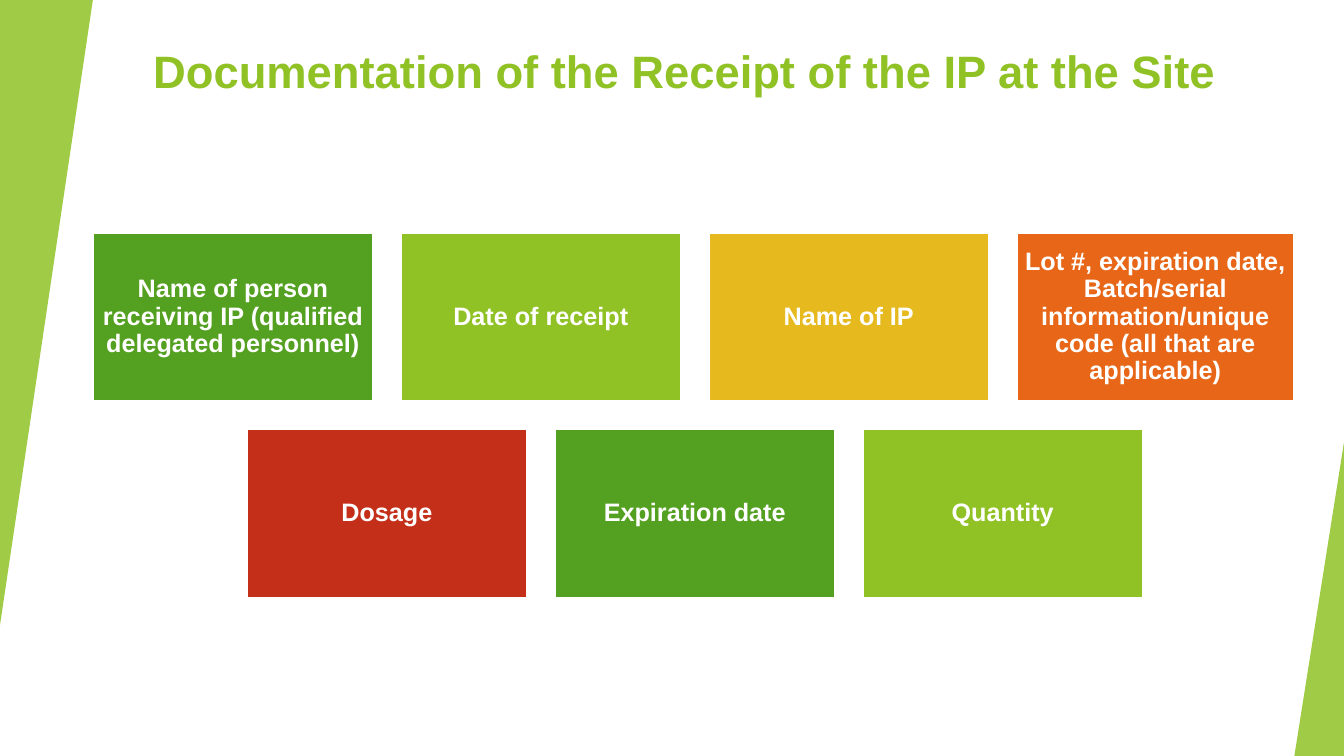
"""Build a slide listing what to document when the IP arrives at the site."""
import dataclasses
import typing

import pptx
import pptx.dml.color
import pptx.enum.shapes
import pptx.enum.text
import pptx.oxml.ns
import pptx.util
from lxml import etree

Cm = pptx.util.Cm
Pt = pptx.util.Pt
SHAPE = pptx.enum.shapes.MSO_SHAPE
ALIGN = pptx.enum.text.PP_ALIGN
ANCHOR = pptx.enum.text.MSO_ANCHOR

SLIDE_WIDTH, SLIDE_HEIGHT = 33.87, 19.05
GREEN, LIME, GOLD, ORANGE, RED, WHITE = (
    "54A021", "90C226", "E6B91E", "E76618", "C42F1A", "FFFFFF")
BOX_WIDTH, BOX_HEIGHT = 7.06, 4.24
COLUMN_STEP, ROW_STEP = 7.76, 4.95
GRID_LEFT, GRID_TOP = 2.34, 5.87


@dataclasses.dataclass
class Wedge:
    left: float
    top: float
    width: float
    height: float
    rotation: float = 0


@dataclasses.dataclass
class Box:
    text: str
    color: str
    width: float = BOX_WIDTH


WEDGES = [
    Wedge(0, 0, 2.34, 15.75, rotation=180),
    Wedge(32.62, 11.15, 1.25, 7.9),
]
ROWS = [
    [
        Box("Name of person receiving IP (qualified delegated personnel)", GREEN),
        Box("Date of receipt", LIME),
        Box("Name of IP", GOLD),
        Box("Lot #, expiration date, Batch/serial information/unique code "
            "(all that are applicable)", ORANGE, width=6.99),
    ],
    [Box("Dosage", RED), Box("Expiration date", GREEN), Box("Quantity", LIME)],
]
BOX_FRAME = {
    "word_wrap": True,
    "vertical_anchor": ANCHOR.MIDDLE,
    "margin_left": Cm(0.17),
    "margin_right": Cm(0.17),
    "margin_top": Cm(0.17),
    "margin_bottom": Cm(0.17),
}
TITLE_FRAME = {"word_wrap": True, "vertical_anchor": ANCHOR.TOP}


def rgb(color: str) -> pptx.dml.color.RGBColor:
    """Turn a hex string into a colour."""
    return pptx.dml.color.RGBColor.from_string(color)


def set_values(target: typing.Any, values: dict[str, typing.Any]) -> None:
    """Set each named attribute of the target."""
    for name, value in values.items():
        setattr(target, name, value)


def write_text(shape: typing.Any, text: str, frame: dict[str, typing.Any],
               size: float, color: str, alignment: typing.Any) -> None:
    """Write one bold paragraph into the shape."""
    set_values(shape.text_frame, frame)
    paragraph = shape.text_frame.paragraphs[0]
    set_values(paragraph, {"alignment": alignment, "line_spacing": 0.9})
    run = paragraph.add_run()
    run.text = text
    set_values(run.font, {"name": "Arial", "size": Pt(size), "bold": True})
    run.font.color.rgb = rgb(color)


def add_filled(slide: typing.Any, kind: typing.Any, left: float, top: float,
               width: float, height: float, color: str) -> typing.Any:
    """Add a flat preset shape with a solid fill."""
    shape = slide.shapes.add_shape(kind, Cm(left), Cm(top), Cm(width), Cm(height))
    shape.shadow.inherit = False
    shape.fill.solid()
    shape.fill.fore_color.rgb = rgb(color)
    return shape


def add_wedge(slide: typing.Any, wedge: Wedge) -> None:
    """Add a translucent right triangle at the slide's edge."""
    shape = add_filled(slide, SHAPE.ISOSCELES_TRIANGLE, wedge.left, wedge.top,
                       wedge.width, wedge.height, LIME)
    shape.adjustments[0] = 1
    shape.rotation = wedge.rotation
    shape.line.fill.background()
    qn = pptx.oxml.ns.qn
    fill_color = shape.fill._xPr.find(qn("a:solidFill")).find(qn("a:srgbClr"))
    etree.SubElement(fill_color, qn("a:alpha"), val="85000")


def add_box(slide: typing.Any, box: Box, left: float, top: float) -> None:
    """Add a coloured box with its centred label."""
    shape = add_filled(slide, SHAPE.RECTANGLE, left, top, box.width, BOX_HEIGHT,
                       box.color)
    shape.line.color.rgb = rgb(WHITE)
    shape.line.width = Pt(1.5)
    write_text(shape, box.text, BOX_FRAME, 18, WHITE, ALIGN.CENTER)


def main() -> None:
    """Build the slide and save it."""
    presentation = pptx.Presentation()
    set_values(presentation, {"slide_width": Cm(SLIDE_WIDTH),
                              "slide_height": Cm(SLIDE_HEIGHT)})
    slide = presentation.slides.add_slide(presentation.slide_layouts[6])

    title = slide.shapes.add_textbox(Cm(3.61), Cm(1.12), Cm(28.32), Cm(3.15))
    write_text(title, "Documentation of the Receipt of the IP at the Site",
               TITLE_FRAME, 32.4, LIME, ALIGN.LEFT)

    for wedge in WEDGES:
        add_wedge(slide, wedge)

    for row_index, row in enumerate(ROWS):
        row_left = GRID_LEFT + (len(ROWS[0]) - len(row)) * COLUMN_STEP / 2
        for column_index, box in enumerate(row):
            add_box(slide, box, row_left + column_index * COLUMN_STEP,
                    GRID_TOP + row_index * ROW_STEP)

    presentation.save("out.pptx")


if __name__ == "__main__":
    main()
